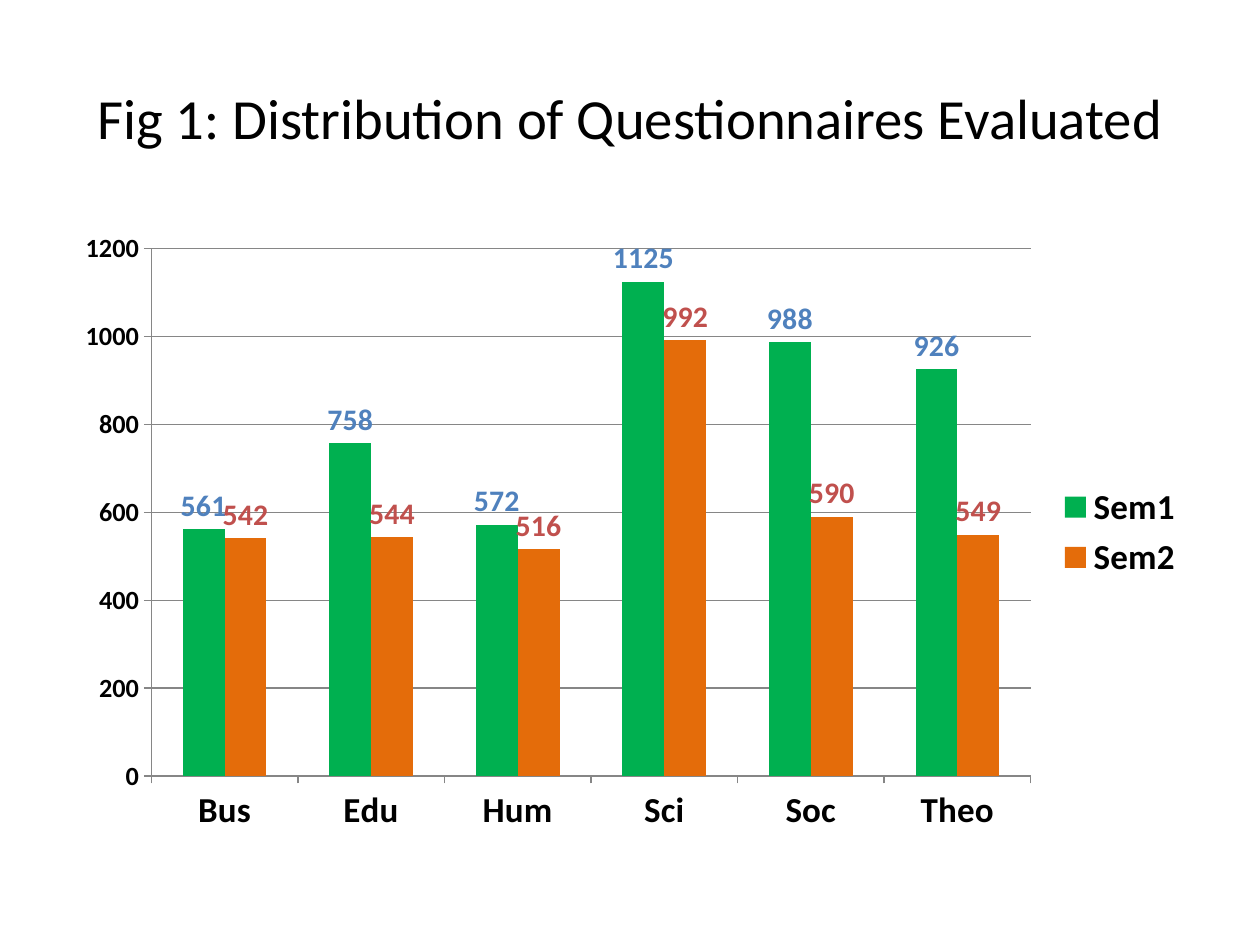
from pptx import Presentation
from pptx.chart.data import CategoryChartData
from pptx.dml.color import RGBColor
from pptx.enum.chart import XL_CHART_TYPE as Kind, XL_LABEL_POSITION as Spot
from pptx.enum.chart import XL_LEGEND_POSITION as Side, XL_TICK_MARK as Tick
from pptx.enum.text import MSO_ANCHOR as Anchor, PP_ALIGN as Align
from pptx.util import Pt

COLORS = {
    "text": "000000",
    "line": "868686",
    "Sem1": "00B050",
    "Sem2": "E46C0A",
    "Sem1 label": "4F81BD",
    "Sem2 label": "C0504D",
}
COUNTS = {
    "Sem1": (561, 758, 572, 1125, 988, 926),
    "Sem2": (542, 544, 516, 992, 590, 549),
}


def style(font, size, color="text", bold=True):
    font.name = "Calibri"
    font.size = Pt(size)
    font.bold = bold
    font.color.rgb = RGBColor.from_string(COLORS[color])


deck = Presentation()
deck.slide_width, deck.slide_height = Pt(720), Pt(540)
slide = deck.slides.add_slide(deck.slide_layouts[5])

# Title
title = slide.shapes.title
title.left, title.top, title.width, title.height = Pt(36), Pt(21.6), Pt(648), Pt(90)
frame = title.text_frame
frame.text = "Fig 1: Distribution of Questionnaires Evaluated"
frame.vertical_anchor = Anchor.MIDDLE
frame.paragraphs[0].alignment = Align.CENTER
style(frame.paragraphs[0].font, 32.4, bold=False)

# Chart
data = CategoryChartData()
data.categories = ["Bus", "Edu", "Hum", "Sci", "Soc", "Theo"]
for name, counts in COUNTS.items():
    data.add_series(name, counts)
chart = slide.shapes.add_chart(
    Kind.COLUMN_CLUSTERED, Pt(36), Pt(126), Pt(648), Pt(356.4), data
).chart
chart.has_title = False
style(chart.font, 15)

# Axes
faculty, count = chart.category_axis, chart.value_axis
count.minimum_scale, count.maximum_scale, count.major_unit = 0, 1200, 200
count.has_major_gridlines = True
for axis, size in ((faculty, 20), (count, 15)):
    axis.major_tick_mark = Tick.OUTSIDE
    style(axis.tick_labels.font, size)
for part in (faculty, count, count.major_gridlines):
    part.format.line.width = Pt(0.75)
    part.format.line.color.rgb = RGBColor.from_string(COLORS["line"])

# Legend
chart.has_legend = True
chart.legend.position = Side.RIGHT
chart.legend.include_in_layout = False
style(chart.legend.font, 20)

# Columns and their values
plot = chart.plots[0]
plot.vary_by_categories = False
plot.gap_width, plot.overlap = 150, 0
for series in plot.series:
    series.format.fill.solid()
    series.format.fill.fore_color.rgb = RGBColor.from_string(COLORS[series.name])
    labels = series.data_labels
    labels.show_value = True
    labels.position = Spot.OUTSIDE_END
    style(labels.font, 17, f"{series.name} label")

deck.save("out.pptx")
